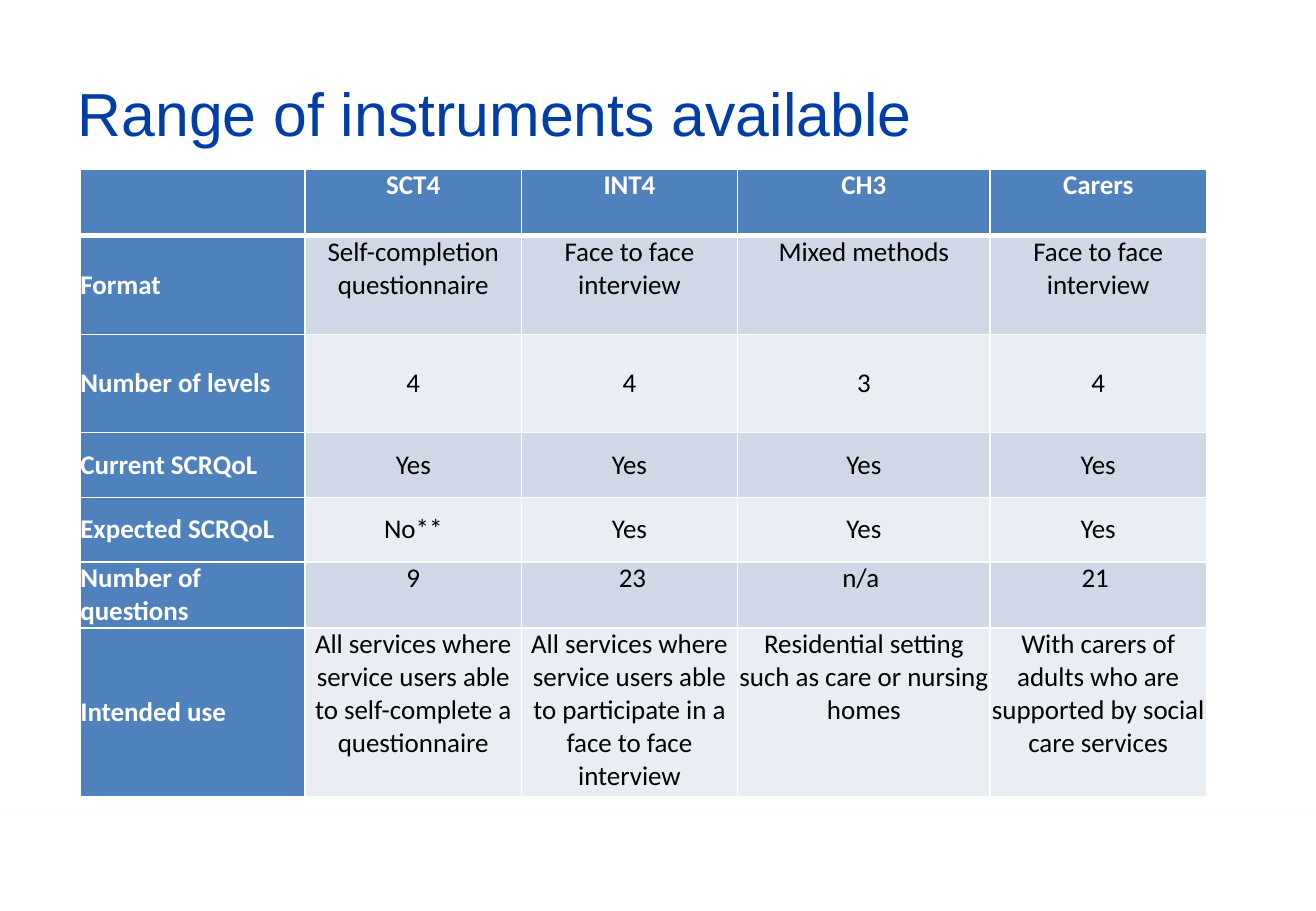
"""Build a slide with a table that compares the available instruments."""
from lxml import etree
from pptx import Presentation
from pptx import util as u
from pptx.dml.color import RGBColor
from pptx.enum import shapes, text
from pptx.oxml import parse_xml

NS = 'xmlns:a="http://schemas.openxmlformats.org/drawingml/2006/main"'
BLUE, WHITE = "4F81BD", "FFFFFF"
BANDS = ["E9EDF4", "D0D8E8"]


def rgb(value):
    return RGBColor.from_string(value)


def write(tf, content, size=16, font="Calibri", color="000000", bold=False,
          align=text.PP_ALIGN.CENTER):
    p = tf.paragraphs[0]
    p.alignment = align
    r = p.add_run()
    r.text = content
    r.font.size, r.font.name, r.font.bold = u.Pt(size), font, bold
    r.font.color.rgb = rgb(color)


prs = Presentation()
prs.slide_width, prs.slide_height = u.Cm(27.51), u.Cm(19.05)
s = prs.slides.add_slide(prs.slide_layouts[5])

band = s.shapes.add_shape(shapes.MSO_SHAPE.RECTANGLE, 0, u.Cm(17.02), prs.slide_width, u.Cm(2.03))
band.fill.solid()
band.fill.fore_color.rgb = rgb(WHITE)
band.line.fill.background()
band.shadow.inherit = False
effects = band._element.spPr.find("{*}effectLst")
effects.append(parse_xml(
    f'<a:outerShdw {NS} blurRad="40000" dist="23000" dir="5400000" rotWithShape="0">'
    '<a:srgbClr val="000000"><a:alpha val="35000"/></a:srgbClr></a:outerShdw>'))

title = s.shapes.title
title.left, title.top, title.width, title.height = u.Cm(1.37), u.Cm(0.76), u.Cm(24.77), u.Cm(3.18)
tf = title.text_frame
tf.auto_size = text.MSO_AUTO_SIZE.NONE
tf.vertical_anchor = text.MSO_ANCHOR.MIDDLE
write(tf, "Range of instruments available", size=36, font="Arial", color="003DA6",
      align=text.PP_ALIGN.LEFT)

rows = [
    ["", "SCT4", "INT4", "CH3", "Carers"],
    ["Format", "Self-completion questionnaire", "Face to face interview", "Mixed methods",
     "Face to face interview"],
    ["Number of levels", "4", "4", "3", "4"],
    ["Current SCRQoL", "Yes", "Yes", "Yes", "Yes"],
    ["Expected SCRQoL", "No**", "Yes", "Yes", "Yes"],
    ["Number of questions", "9", " 23", "n/a ", "21 "],
    ["Intended use",
     "All services where service users able to self-complete a questionnaire",
     "All services where service users able to participate in a face to face interview",
     "Residential setting such as care or nursing homes",
     "With carers of adults who are supported by social care services"],
]
widths = [4.7, 4.52, 4.52, 5.28, 4.52]
heights = [1.4, 2.06, 2.06, 1.35, 1.35, 1.38, 3.52]
middle_rows = {2, 3, 4}

table = s.shapes.add_table(len(rows), len(widths), u.Cm(1.68), u.Cm(3.53),
                           u.Cm(sum(widths)), u.Cm(sum(heights))).table
for column, width in zip(table.columns, widths):
    column.width = u.Cm(width)
for row, height in zip(table.rows, heights):
    row.height = u.Cm(height)

for i, row in enumerate(rows):
    for j, content in enumerate(row):
        cell = table.cell(i, j)
        heading = i == 0 or j == 0
        cell.margin_left = cell.margin_right = cell.margin_top = cell.margin_bottom = 0
        middle = i in middle_rows or (i > 0 and j == 0)
        cell.vertical_anchor = text.MSO_ANCHOR.MIDDLE if middle else text.MSO_ANCHOR.TOP
        for side, thick in (("L", False), ("R", False), ("T", i == 1), ("B", i == 0)):
            line = parse_xml(f'<a:ln{side} {NS} w="{u.Pt(3 if thick else 1)}"><a:solidFill>'
                             f'<a:srgbClr val="{WHITE}"/></a:solidFill></a:ln{side}>')
            cell._tc.get_or_add_tcPr().append(line)
        cell.fill.solid()
        cell.fill.fore_color.rgb = rgb(BLUE if heading else BANDS[i % 2])
        if content:
            write(cell.text_frame, content, bold=heading, color=WHITE if heading else "000000",
                  align=text.PP_ALIGN.CENTER if j else text.PP_ALIGN.LEFT)

prs.save("out.pptx")
